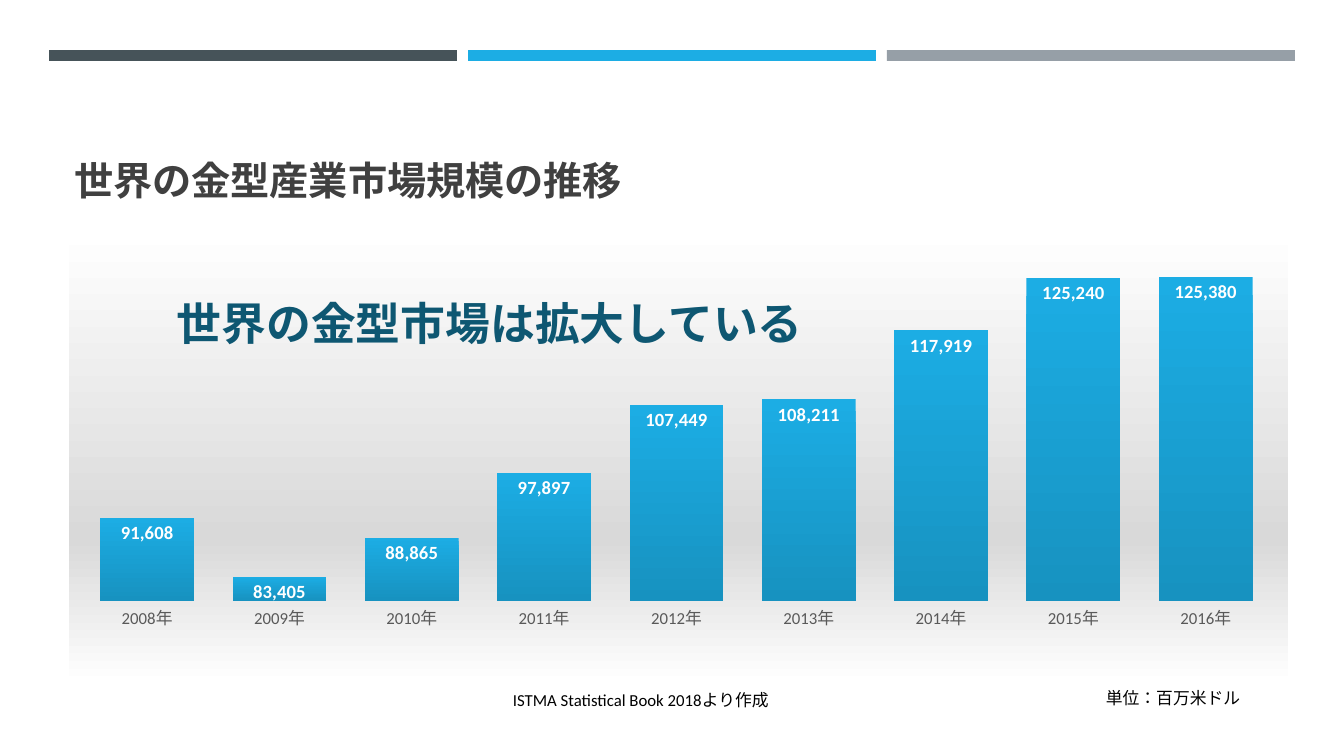
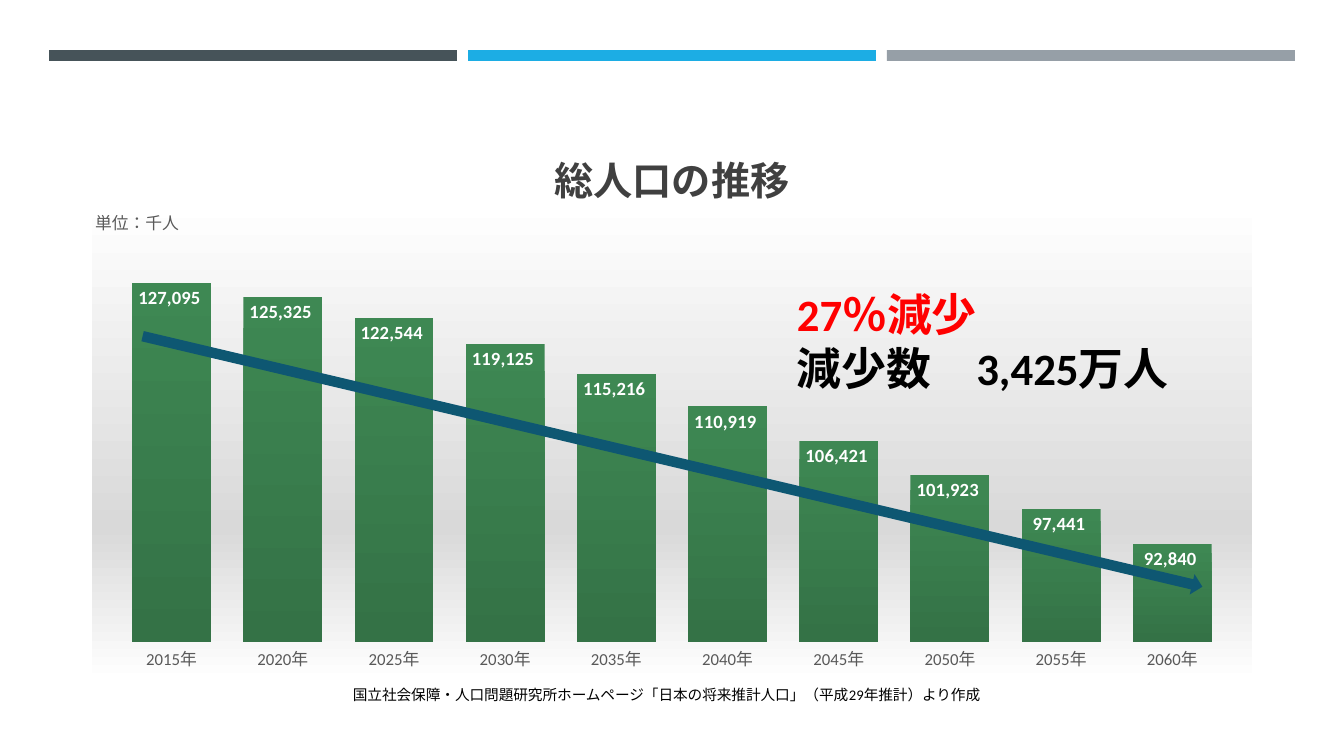
from lxml.etree import SubElement
from pptx import Presentation
from pptx.chart.data import CategoryChartData
from pptx.dml.color import RGBColor
from pptx.enum.chart import XL_CHART_TYPE, XL_LABEL_POSITION, XL_TICK_MARK
from pptx.enum.lang import MSO_LANGUAGE_ID
from pptx.enum.shapes import MSO_SHAPE
from pptx.enum.text import MSO_ANCHOR, MSO_AUTO_SIZE, PP_ALIGN
from pptx.oxml import parse_xml
from pptx.oxml.ns import nsdecls, qn
from pptx.util import Pt

# Shared style
PX = 914400 / 100.8
LATIN, CJK = "Calibri", "Noto Sans CJK JP"
BLACK = RGBColor(0x00, 0x00, 0x00)
WHITE = RGBColor(0xFF, 0xFF, 0xFF)
RED = RGBColor(0xFF, 0x00, 0x00)
SLATE = RGBColor(0x46, 0x53, 0x59)
BLUE = RGBColor(0x1C, 0xAD, 0xE4)
BLUE_DARK = RGBColor(0x17, 0x92, 0xC0)
GREEN = RGBColor(0x3E, 0x88, 0x53)
GREEN_DARK = RGBColor(0x34, 0x72, 0x46)
GRAY = RGBColor(0x96, 0x9F, 0xA7)
PALE = RGBColor(0xD9, 0xD9, 0xD9)
TITLE_GRAY = RGBColor(0x40, 0x40, 0x40)
AXIS_GRAY = RGBColor(0x59, 0x59, 0x59)
NAVY = RGBColor(0x0E, 0x57, 0x72)
BANDS = [SLATE, BLUE, GRAY]
BAND_LEFT, BAND_RIGHT, BAND_TOP, BAND_W, BAND_H = 49, 1295, 50, 408, 11
TITLE_BOX = (64, 77, 1216, 131)
BACKDROP = [(0, WHITE), (68, PALE), (100, WHITE)]
AXIS_MIN, AXIS_MAX = 80000, 130000

# Content: texts are (box, wrap, size, bold, [(line, colour)])
MARKET = {
    "title": "世界の金型産業市場規模の推移",
    "align": PP_ALIGN.LEFT,
    "chart": {
        "box": (69, 229, 1219, 455),
        "plot": (81, 244, 1191, 357),
        "colors": (BLUE, BLUE_DARK),
        "unit": None,
        "scale": 1000000,
        "number_format": "#,##0,,",
        "years": range(2008, 2017),
        "values": [91608, 83405, 88865, 97897, 107449, 108211, 117919, 125240, 125380],
    },
    "texts": [
        ((1096, 683, 156, 30), False, 12, False, [("単位：百万米ドル", BLACK)]),
        ((503, 685, 310, 30), False, 12, False,
         [("ISTMA Statistical Book 2018より作成", BLACK)]),
    ],
}
POPULATION = {
    "title": "総人口の推移",
    "align": PP_ALIGN.CENTER,
    "chart": {
        "box": (92, 201, 1160, 480),
        "plot": (116, 261, 1112, 381),
        "colors": (GREEN, GREEN_DARK),
        "unit": "単位：千人",
        "scale": 1,
        "number_format": "#,##0_ ",
        "years": range(2015, 2061, 5),
        "values": [127095, 125325, 122544, 119125, 115216,
                   110919, 106421, 101923, 97441, 92840],
    },
    "texts": [
        ((787, 282, 465, 119), True, 32, True,
         [("27％減少", RED), ("減少数　3,425万人", BLACK)]),
        ((343, 681, 659, 28), False, 10.5, False,
         [("国立社会保障・人口問題研究所ホームページ「日本の将来推計人口」（平成29年推計）より作成", BLACK)]),
    ],
}
UNIT_POS = (92, 209)
HEADLINE, HEADLINE_BOX = "世界の金型市場は拡大している", (106, 284, 768, 78)
ARROW_BOX, ARROW_ANGLE = (128, 451, 1089, 21), 13.3


def emu(box):
    return [round(n * PX) for n in box]


def style_font(font, size, color, bold=False, name=LATIN):
    font.size, font.bold, font.name = Pt(size), bold, name
    font.color.rgb = color


def style_paragraph(p, size, color, bold=False, name=LATIN):
    for r in p.runs:
        style_font(r.font, size, color, bold, name)
        r.font.language_id = MSO_LANGUAGE_ID.JAPANESE
        SubElement(r.font._element, qn("a:ea")).set("typeface", name)


def add_shape(s, kind, box, color=None):
    sp = s.shapes.add_shape(kind, *emu(box))
    sp.shadow.inherit = False
    sp.line.fill.background()
    if color is None:
        sp.fill.background()
    else:
        sp.fill.solid()
        sp.fill.fore_color.rgb = color
    return sp


def add_text(s, box, wrap, size, bold, lines):
    tf = s.shapes.add_textbox(*emu(box)).text_frame
    tf.word_wrap = wrap
    tf.auto_size = MSO_AUTO_SIZE.SHAPE_TO_FIT_TEXT
    tf.text = "\n".join(text for text, _ in lines)
    for p, (_, color) in zip(tf.paragraphs, lines):
        style_paragraph(p, size, color, bold)


def layout_xml(box, x, y, w=None, h=None):
    """Manual layout as shares of the chart box; a size places the inner plot area."""
    left, top, width, height = box
    target = '<c:layoutTarget val="inner"/>' if w else ""
    modes = '<c:xMode val="edge"/><c:yMode val="edge"/>'
    size = f'<c:w val="{w / width}"/><c:h val="{h / height}"/>' if w else ""
    return parse_xml(
        f'<c:layout {nsdecls("c")}><c:manualLayout>{target}{modes}'
        f'<c:x val="{(x - left) / width}"/><c:y val="{(y - top) / height}"/>{size}'
        '</c:manualLayout></c:layout>')


def set_layout(element, layout, before):
    for old in element.findall(qn("c:layout")):
        element.remove(old)
    element.find(qn(before)).addprevious(layout)


def add_chart(s, box, plot, colors, unit, scale, number_format, years, values):
    data = CategoryChartData(number_format=number_format)
    data.categories = [f"{year}年" for year in years]
    data.add_series("Series 1", [value * scale for value in values])
    chart = s.shapes.add_chart(XL_CHART_TYPE.COLUMN_CLUSTERED, *emu(box), data).chart
    style_font(chart.font, 10, BLACK)
    chart.has_legend = False

    # Backdrop gradient
    stops = "".join(f'<a:gs pos="{pos * 1000}"><a:srgbClr val="{color}"/></a:gs>'
                    for pos, color in BACKDROP)
    chart.font._element.getparent().getparent().getparent().addprevious(parse_xml(
        f'<c:spPr {nsdecls("c", "a")}><a:gradFill><a:gsLst>{stops}</a:gsLst>'
        '<a:lin ang="5400000" scaled="0"/></a:gradFill><a:ln><a:noFill/></a:ln></c:spPr>'))

    # Unit as chart title
    chart.has_title = unit is not None
    if unit:
        title = chart.chart_title
        title.text_frame.text = unit
        style_paragraph(title.text_frame.paragraphs[0], 12, AXIS_GRAY)
        title.include_in_layout = False
        set_layout(title._element, layout_xml(box, *UNIT_POS), "c:overlay")

    # Axes and plot area
    axis = chart.category_axis
    axis.major_tick_mark = XL_TICK_MARK.NONE
    axis.format.line.fill.background()
    style_font(axis.tick_labels.font, 12, AXIS_GRAY)
    axis = chart.value_axis
    axis.minimum_scale, axis.maximum_scale = AXIS_MIN * scale, AXIS_MAX * scale
    axis.has_major_gridlines = False
    axis.visible = False
    bars = chart.plots[0]
    bars.gap_width = 41
    bars.vary_by_categories = False
    set_layout(bars._element.getparent(), layout_xml(box, *plot), "c:barChart")

    # Columns and their labels
    fill = bars.series[0].format.fill
    fill.gradient()
    fill.gradient_angle = 270
    for stop, color in zip(fill.gradient_stops, colors):
        stop.color.rgb = color
    bars.has_data_labels = True
    labels = bars.data_labels
    labels.show_value = True
    labels.position = XL_LABEL_POSITION.INSIDE_END
    labels.number_format, labels.number_format_is_linked = number_format, False
    style_font(labels.font, 13.3, WHITE, True)


def add_slide(prs, content):
    s = prs.slides.add_slide(prs.slide_layouts[5])
    pitch = (BAND_RIGHT - BAND_LEFT - BAND_W) / (len(BANDS) - 1)
    for i, color in enumerate(BANDS):
        add_shape(s, MSO_SHAPE.RECTANGLE,
                  (BAND_LEFT + i * pitch, BAND_TOP, BAND_W, BAND_H), color)
    title = s.shapes.title
    title.left, title.top, title.width, title.height = emu(TITLE_BOX)
    tf = title.text_frame
    tf.text = content["title"]
    tf.vertical_anchor = MSO_ANCHOR.BOTTOM
    p = tf.paragraphs[0]
    p.alignment = content["align"]
    style_paragraph(p, 28, TITLE_GRAY, True, CJK)
    add_chart(s, **content["chart"])
    return s


def add_texts(s, content):
    for text in content["texts"]:
        add_text(s, *text)


def main():
    prs = Presentation()
    prs.slide_width, prs.slide_height = emu((1344, 756))

    # World market
    s = add_slide(prs, MARKET)
    add_texts(s, MARKET)
    tf = add_shape(s, MSO_SHAPE.ROUNDED_RECTANGLE, HEADLINE_BOX).text_frame
    tf.text = HEADLINE
    tf.vertical_anchor = MSO_ANCHOR.MIDDLE
    tf.paragraphs[0].alignment = PP_ALIGN.CENTER
    style_paragraph(tf.paragraphs[0], 32, NAVY, True)

    # Population
    s = add_slide(prs, POPULATION)
    add_shape(s, MSO_SHAPE.RIGHT_ARROW, ARROW_BOX, NAVY).rotation = ARROW_ANGLE
    add_texts(s, POPULATION)

    prs.save("out.pptx")


if __name__ == "__main__":
    main()
